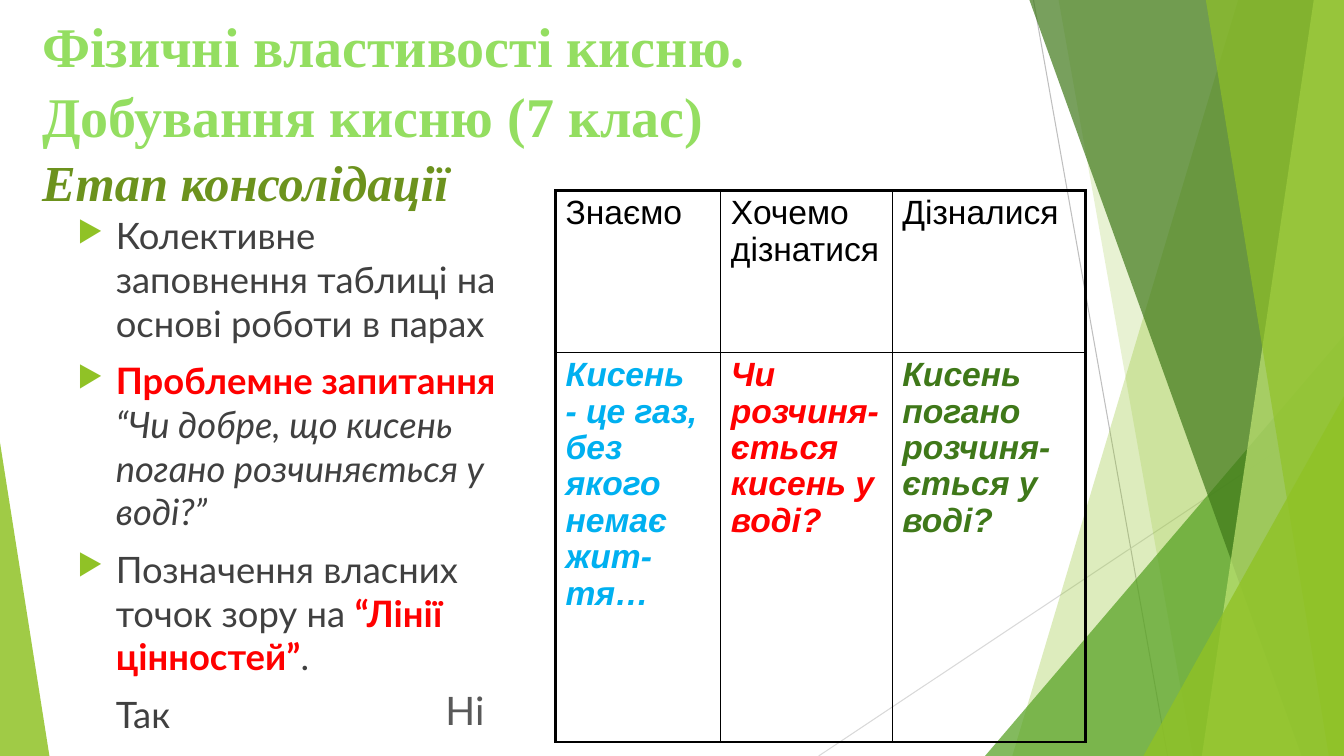
"""Builds the consolidation-stage slide of a lesson on oxygen."""
from lxml import etree
from pptx import Presentation
from pptx.dml.color import RGBColor
from pptx.enum.shapes import MSO_CONNECTOR, MSO_SHAPE
from pptx.enum.text import MSO_ANCHOR
from pptx.oxml.ns import qn
from pptx.util import Inches, Pt

STRAIGHT = MSO_CONNECTOR.STRAIGHT
TRIANGLE = MSO_SHAPE.ISOSCELES_TRIANGLE
TOP = MSO_ANCHOR.TOP
WIDTH, HEIGHT = 13.33, 7.5
LEAF, FOREST, RED, INK = "90C226", "3F7819", "FF0000", "404040"


def color(code):
    return RGBColor.from_string(code)


class LessonSlide:
    """Holds the slide and draws its elements in the lesson style."""

    def __init__(self, slide, font):
        self.slide, self.shapes, self.font = slide, slide.shapes, font

    def line(self, start, end, code):
        line = self.shapes.add_connector(STRAIGHT, *map(Inches, start + end))
        line.line.color.rgb = color(code)
        line.line.width = Pt(0.75)
        etree.SubElement(line._element.spPr, qn("a:effectLst"))

    def tint(self, shape, code, opacity):
        shape.shadow.inherit = False
        shape.line.fill.background()
        shape.fill.solid()
        shape.fill.fore_color.rgb = color(code)
        shade = shape._element.spPr.find(qn("a:solidFill"))[0]
        etree.SubElement(shade, qn("a:alpha"), val=str(opacity * 1000))

    def ray(self, top_x, bottom_x, code, opacity):
        builder = self.shapes.build_freeform(Inches(top_x), 0)
        corners = [(WIDTH, 0), (WIDTH, HEIGHT), (bottom_x, HEIGHT)]
        builder.add_line_segments([(Inches(x), Inches(y)) for x, y in corners])
        self.tint(builder.convert_to_shape(), code, opacity)

    def triangle(self, left, top, width, apex, code, opacity):
        shape = self.shapes.add_shape(
            TRIANGLE, Inches(left), Inches(top), Inches(width), Inches(HEIGHT - top))
        shape.adjustments[0] = apex
        self.tint(shape, code, opacity)

    def style(self, font, size, code, name=None, bold=False, italic=False):
        font.name, font.size = name or self.font, Pt(size)
        font.bold, font.italic = bold, italic
        font.color.rgb = color(code)

    def text(self, left, top, width, height):
        frame = self.shapes.add_textbox(*map(Inches, (left, top, width, height))).text_frame
        frame.word_wrap = True
        frame.vertical_anchor = TOP
        return frame

    def bullets(self, box, items, size):
        frame = self.text(*box)
        for index, (marked, runs) in enumerate(items):
            paragraph = frame.add_paragraph() if index else frame.paragraphs[0]
            paragraph.space_before = Pt(10)
            props = paragraph._p.get_or_add_pPr()
            props.set("marL", str(Inches(0.38)))
            props.set("indent", str(Inches(-0.38 if marked else 0)))
            if marked:
                tone = etree.SubElement(props, qn("a:buClr"))
                etree.SubElement(tone, qn("a:srgbClr"), val=LEAF)
                etree.SubElement(props, qn("a:buSzPct"), val="80000")
                etree.SubElement(props, qn("a:buChar"), char="▶")
            for words, code, bold, italic in runs:
                run = paragraph.add_run()
                run.text = words
                self.style(run.font, size, code, bold=bold, italic=italic)

    def border(self, cell, side, width):
        edge = etree.SubElement(cell._tc.get_or_add_tcPr(), qn(f"a:ln{side}"), w=str(Pt(width)))
        fill = etree.SubElement(edge, qn("a:solidFill"))
        etree.SubElement(fill, qn("a:srgbClr"), val="000000")

    def table(self, box, widths, heights, rows, font, size):
        table = self.shapes.add_table(
            len(heights), len(widths), *map(Inches, box)).table
        table.first_row = table.horz_banding = False
        for column, width in zip(table.columns, widths):
            column.width = Inches(width)
        for row, height in zip(table.rows, heights):
            row.height = Inches(height)
        last_row, last_column = len(heights) - 1, len(widths) - 1
        for r, row in enumerate(rows):
            for c, (words, code) in enumerate(row):
                cell = table.cell(r, c)
                cell.text = words
                paragraph = cell.text_frame.paragraphs[0]
                paragraph.line_spacing = 0.97
                self.style(paragraph.font, size, code, font, bold=r > 0, italic=r > 0)
                outer = {"L": c == 0, "R": c == last_column, "T": r == 0, "B": r == last_row}
                for side, is_outer in outer.items():
                    self.border(cell, side, 2.25 if is_outer else 1)
                cell.fill.background()


def main():
    deck = Presentation()
    deck.slide_width, deck.slide_height = Inches(WIDTH), Inches(HEIGHT)
    lesson = LessonSlide(deck.slides.add_slide(deck.slide_layouts[6]), "Lato")

    lesson.line((10.25, 0), (11.58, HEIGHT), "BFBFBF")
    lesson.line((WIDTH, 4.03), (8.12, HEIGHT), "D9D9D9")
    lesson.ray(12.28, 10.04, LEAF, 30)
    lesson.ray(10.5, 11.83, LEAF, 20)
    lesson.triangle(9.77, 3.33, 3.56, 1, "54A021", 72)
    lesson.ray(10.21, 12.91, FOREST, 70)
    lesson.ray(13.03, 11.92, "C0E474", 70)
    lesson.ray(11.96, 13.18, LEAF, 65)
    lesson.triangle(11.34, 3.93, 1.99, 1, LEAF, 80)
    lesson.triangle(0, 4.39, 0.49, 0, LEAF, 85)

    lesson.bullets((0.67, 2.07, 4.55, 4.96), [
        (True, [("Колективне заповнення таблиці на основі роботи в парах", INK, False, False)]),
        (True, [("Проблемне запитання ", RED, True, False),
                ("“Чи добре, що кисень погано розчиняється у воді?”", INK, False, True)]),
        (True, [("Позначення власних точок зору на ", INK, False, False),
                ("“Лінії цінностей”", RED, True, False),
                (".", INK, False, False)]),
        (False, [("Так", INK, False, False)]),
    ], 26)

    heading = lesson.text(0.32, 0, 10.84, 1.25)
    heading.margin_top = Inches(0.09)
    titles = [("Фізичні властивості кисню.", 40, "94DE61", False),
              ("Добування кисню (7 клас)", 40, "94DE61", False),
              ("Етап консолідації", 36, "6C921D", True)]
    for index, (words, size, code, italic) in enumerate(titles):
        paragraph = heading.add_paragraph() if index else heading.paragraphs[0]
        paragraph.text = words
        paragraph.line_spacing = 1.04
        lesson.style(paragraph.font, size, code, "Times New Roman", True, italic)

    answer = lesson.text(4.32, 6.76, 0.71, 0.6).paragraphs[0]
    answer.text = "Ні"
    lesson.style(answer.font, 28, "595959")

    lesson.table((5.51, 1.89, 5.26, 5.47), (1.64, 1.7, 1.92), (1.61, 3.86), [
        [("Знаємо", "000000"), ("Хочемо дізнатися", "000000"), ("Дізналися", "000000")],
        [("Кисень\v- це газ, без якого немає жит-тя…", "00B0F0"),
         ("Чи розчиня-ється кисень у воді?", RED),
         ("Кисень погано розчиня-ється у воді?", FOREST)],
    ], "Arial", 24)
    deck.save("out.pptx")


if __name__ == "__main__":
    main()
